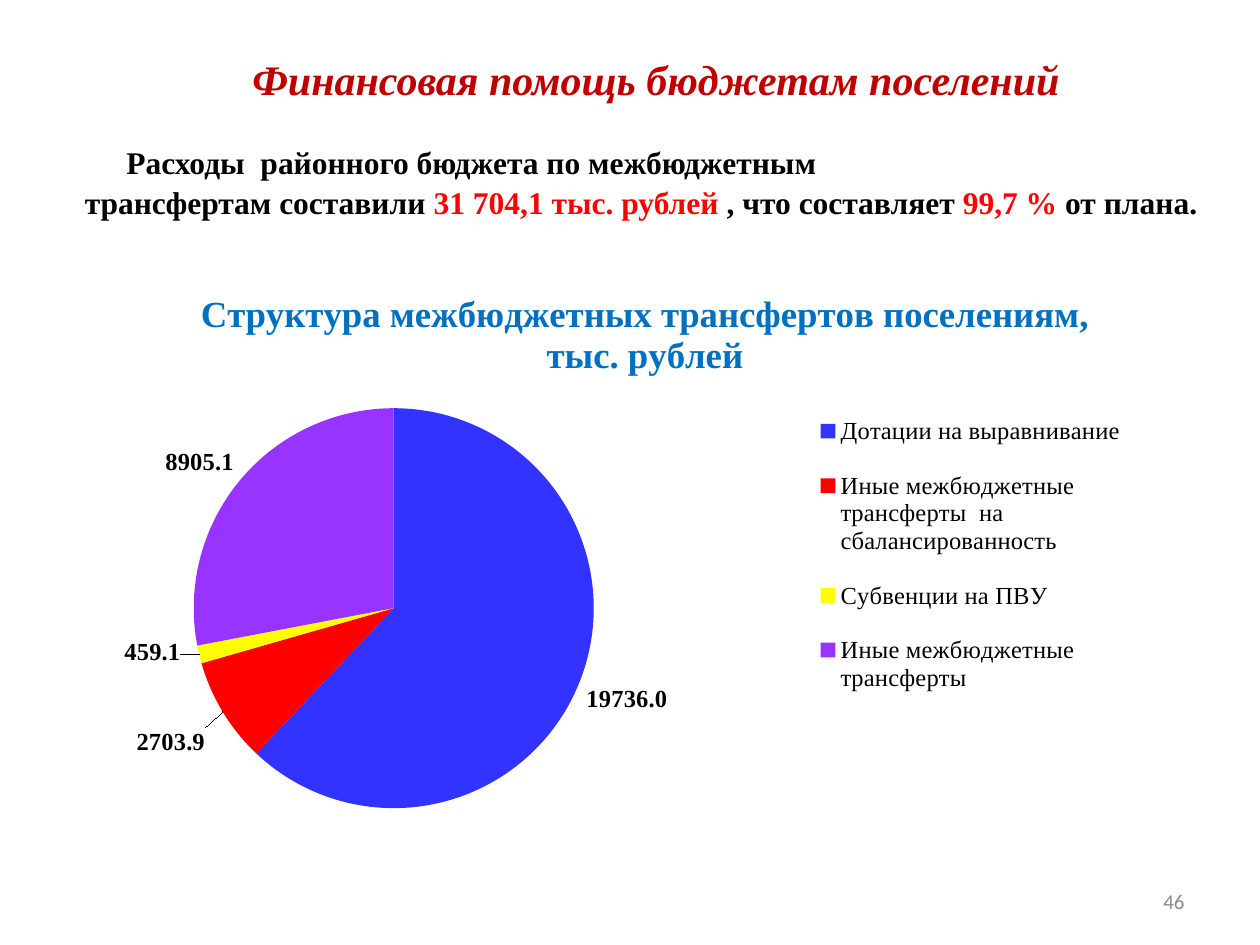
from lxml import etree
from pptx import Presentation
from pptx.chart.data import CategoryChartData
from pptx.dml.color import RGBColor
from pptx.enum.chart import XL_CHART_TYPE, XL_LABEL_POSITION, XL_LEGEND_POSITION
from pptx.enum.text import MSO_ANCHOR, PP_ALIGN
from pptx.oxml.ns import qn
from pptx.util import Emu, Pt

PX = 914400 / 126
BLACK = RGBColor(0x00, 0x00, 0x00)
RED = RGBColor(0xFF, 0x00, 0x00)
DARK_RED = RGBColor(0xC0, 0x00, 0x00)
HEADING_BLUE = RGBColor(0x00, 0x70, 0xC0)
GRAY = RGBColor(0x8C, 0x8C, 0x8C)
BLUE = RGBColor(0x33, 0x33, 0xFF)
YELLOW = RGBColor(0xFF, 0xFF, 0x00)
VIOLET = RGBColor(0x99, 0x33, 0xFF)
PIE = XL_CHART_TYPE.PIE
OUTSIDE = XL_LABEL_POSITION.OUTSIDE_END
RIGHT_LEGEND = XL_LEGEND_POSITION.RIGHT
MIDDLE, TOP = MSO_ANCHOR.MIDDLE, MSO_ANCHOR.TOP
LEFT, CENTER, RIGHT = PP_ALIGN.LEFT, PP_ALIGN.CENTER, PP_ALIGN.RIGHT

SERIF = "Times New Roman"
HEADLINE = {"name": SERIF, "size": Pt(24), "bold": True, "italic": True}
BODY = {"name": SERIF, "size": Pt(18), "bold": True}
CHART_HEADING = {"name": SERIF, "size": Pt(21), "bold": True}
VALUE = {"name": SERIF, "size": Pt(14), "bold": True}
LEGEND = {"name": SERIF, "size": Pt(14), "bold": False}
PAGE_NUMBER = {"name": "Calibri", "size": Pt(12)}

STRUCTURE = "Структура межбюджетных трансфертов поселениям, тыс. рублей"
TRANSFERS = [
    ("Дотации на выравнивание", 19736.0, BLUE),
    ("Иные межбюджетные трансферты  на сбалансированность", 2703.9, RED),
    ("Субвенции на ПВУ", 459.1, YELLOW),
    ("Иные межбюджетные трансферты", 8905.1, VIOLET),
]
LABEL_SHIFTS = {1: {"x": -0.01, "y": 0.02}, 2: {"x": -0.01, "y": -0.03}}
EXPENSES = [
    [("Расходы  районного бюджета по межбюджетным", BLACK)],
    [
        ("трансфертам составили ", BLACK),
        ("31 704,1 тыс. рублей ", RED),
        (", что составляет ", BLACK),
        ("99,7 %", RED),
        (" от плана.", BLACK),
    ],
]


def px(length):
    return Emu(round(length * PX))


def apply_font(font, style, color):
    for attribute, value in style.items():
        setattr(font, attribute, value)
    font.color.rgb = color


def set_layout(parent, index, values):
    for old in parent.findall(qn("c:layout")):
        parent.remove(old)
    layout = etree.Element(qn("c:layout"))
    manual = etree.SubElement(layout, qn("c:manualLayout"))
    for tag, value in values.items():
        etree.SubElement(manual, qn(f"c:{tag}")).set("val", str(value))
    parent.insert(index, layout)


class SlideBuilder:
    def __init__(self, presentation):
        self.slide = presentation.slides.add_slide(presentation.slide_layouts[5])

    def add_runs(self, paragraph, runs, style, align):
        paragraph.alignment = align
        for text, color in runs:
            run = paragraph.add_run()
            run.text = text
            apply_font(run.font, style, color)

    def title(self, box, text):
        title = self.slide.shapes.title
        title.left, title.top, title.width, title.height = map(px, box)
        title.text_frame.vertical_anchor = MIDDLE
        self.add_runs(title.text_frame.paragraphs[0], [(text, DARK_RED)], HEADLINE, CENTER)

    def text(self, box, lines, style, aligns, anchor=TOP, spacing=1.0, margin=0):
        frame = self.slide.shapes.add_textbox(*map(px, box)).text_frame
        frame.word_wrap = True
        frame.vertical_anchor = anchor
        for index, (runs, align) in enumerate(zip(lines, aligns)):
            paragraph = frame.add_paragraph() if index else frame.paragraphs[0]
            paragraph.line_spacing = spacing
            if align == LEFT:
                paragraph._p.get_or_add_pPr().set("marL", str(px(margin)))
            self.add_runs(paragraph, runs, style, align)

    def pie(self, box, heading, slices):
        names, values, colors = zip(*slices)
        data = CategoryChartData(number_format="0.0")
        data.categories = names
        data.add_series(heading, values)
        chart = self.slide.shapes.add_chart(PIE, *map(px, box), data).chart
        apply_font(chart.font, {"name": "Calibri", "size": Pt(18)}, BLACK)

        chart.has_title = True
        paragraph = chart.chart_title.text_frame.paragraphs[0]
        self.add_runs(paragraph, [(heading, HEADING_BLUE)], CHART_HEADING, CENTER)

        chart.has_legend = True
        chart.legend.position = RIGHT_LEGEND
        chart.legend.include_in_layout = False
        apply_font(chart.legend.font, LEGEND, BLACK)
        set_layout(chart.legend._element, 1, {
            "xMode": "edge", "yMode": "edge",
            "x": 0.64, "y": 0.21, "w": 0.29, "h": 0.55})

        plot = chart.plots[0]
        plot.vary_by_categories = True
        set_layout(chart._chartSpace.chart.plotArea, 0, {
            "layoutTarget": "inner", "xMode": "edge", "yMode": "edge",
            "x": 0.01, "y": 0.24, "w": 0.54, "h": 0.67})

        series = plot.series[0]
        labels = series.data_labels
        labels.show_value = True
        labels.number_format = "0.0"
        labels.number_format_is_linked = False
        labels.position = OUTSIDE
        apply_font(labels.font, VALUE, BLACK)
        for index, color in enumerate(colors):
            fill = series.points[index].format.fill
            fill.solid()
            fill.fore_color.rgb = color
        for index, shift in LABEL_SHIFTS.items():
            label = series.points[index].data_label
            label.position = OUTSIDE
            apply_font(label.font, VALUE, BLACK)
            set_layout(labels._element.findall(qn("c:dLbl"))[-1], 1, shift)


def main():
    presentation = Presentation()
    presentation.slide_width, presentation.slide_height = px(1260), px(945)
    builder = SlideBuilder(presentation)
    builder.title((154, 24, 1004, 110), "Финансовая помощь бюджетам поселений")
    builder.pie((74, 265, 1142, 597), STRUCTURE, TRANSFERS)
    builder.text((66, 135, 1150, 89), EXPENSES, BODY, [LEFT, CENTER],
                 spacing=1.05, margin=48)
    builder.text((903, 876, 294, 50), [[("46", GRAY)]], PAGE_NUMBER, [RIGHT], MIDDLE)
    presentation.save("out.pptx")


if __name__ == "__main__":
    main()
